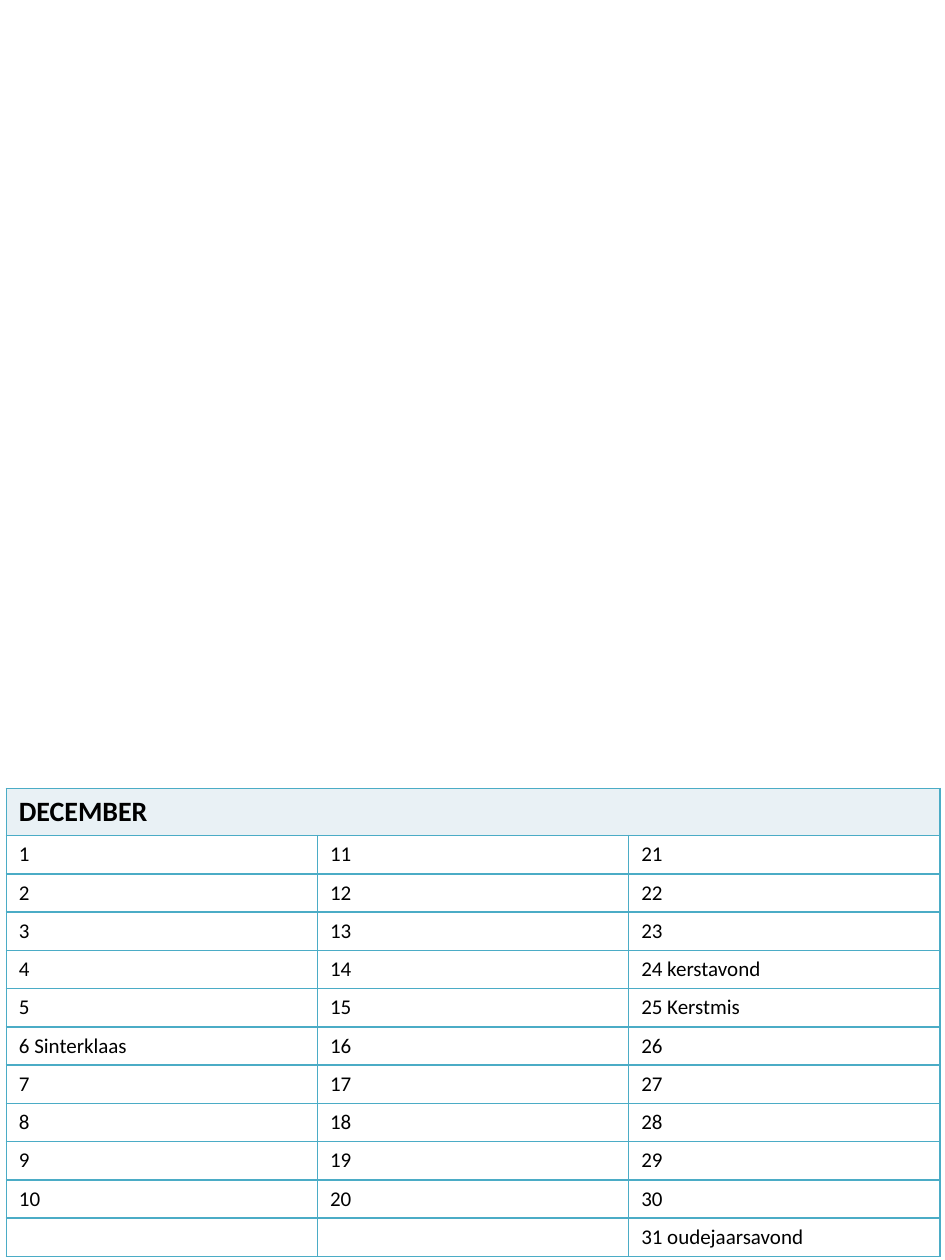
from lxml.etree import SubElement
from pptx import Presentation
from pptx.dml.color import RGBColor
from pptx.oxml import parse_xml
from pptx.oxml.ns import nsdecls, qn
from pptx.util import Inches, Pt


def color(code):
    return RGBColor.from_string(code)


def write(cell, text, size=12, bold=False, fill="FFFFFF", ink="000000", edge="4BACC6"):
    # Borders go before the fill in the cell properties
    props = cell._tc.get_or_add_tcPr()
    for side in ("lnL", "lnR", "lnT", "lnB"):
        props.append(parse_xml(
            f'<a:{side} {nsdecls("a")} w="{Pt(1)}"><a:solidFill>'
            f'<a:srgbClr val="{edge}"/></a:solidFill></a:{side}>'))
    cell.fill.solid()
    cell.fill.fore_color.rgb = color(fill)
    para = cell.text_frame.paragraphs[0]
    if text:
        run = para.add_run()
        run.text = text
        run.font.name = "Calibri"
        run.font.size = Pt(size)
        run.font.bold = bold
        run.font.color.rgb = color(ink)
    else:
        # An empty cell keeps the row height of its text size
        SubElement(para._p, qn("a:endParaRPr"), sz=str(size * 100))


deck = Presentation()
deck.slide_width = Inches(7.5)
deck.slide_height = Inches(10)
slide = deck.slides.add_slide(deck.slide_layouts[6])

# Calendar table
rows, cols, span = 12, 3, 10
head, line = Inches(0.37), Inches(0.3)
frame = slide.shapes.add_table(rows, cols, Inches(0.05), Inches(6.26),
                               Inches(7.41), head + line * (rows - 1))
table = frame.table
table.first_row = False
table.horz_banding = False
for col in table.columns:
    col.width = Inches(2.47)
for row in table.rows:
    row.height = line
table.rows[0].height = head

# Month heading
for col in range(cols):
    write(table.cell(0, col), "" if col else "DECEMBER",
          size=16, bold=True, fill="E9F1F5")
table.cell(0, 0).merge(table.cell(0, cols - 1))

# Days, ten to a column, with the last day below
feasts = {6: "Sinterklaas", 24: "kerstavond", 25: "Kerstmis", 31: "oudejaarsavond"}
for col in range(cols):
    for row in range(1, rows):
        day = col * span + row
        text = f"{day} {feasts.get(day, '')}".strip()
        if row > span and col < cols - 1:
            text = ""
        write(table.cell(row, col), text)

deck.save("out.pptx")
